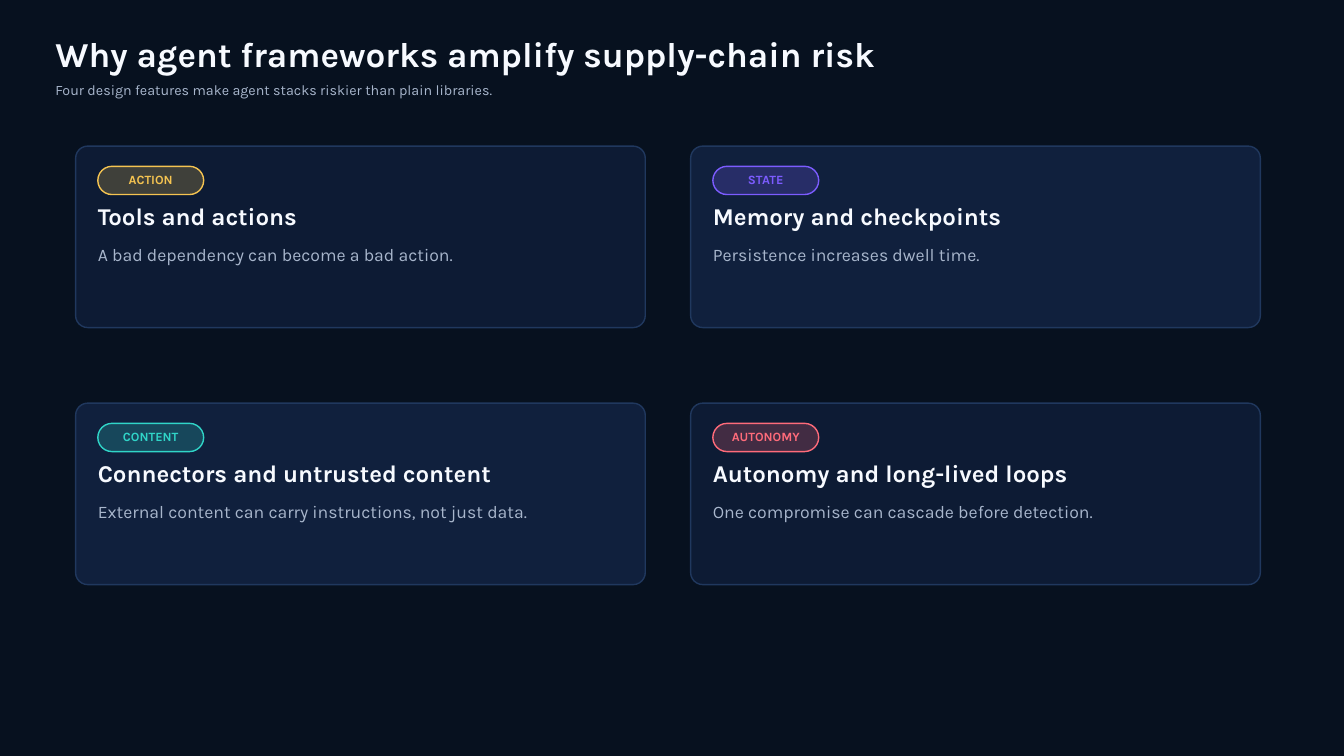
import lxml.etree
import pptx
import pptx.dml.color
import pptx.enum.shapes
import pptx.enum.text
import pptx.oxml.ns
import pptx.util

Inches = pptx.util.Inches
hex_color = pptx.dml.color.RGBColor.from_string
LEFT = pptx.enum.text.PP_ALIGN.LEFT
CENTER = pptx.enum.text.PP_ALIGN.CENTER
WHITE, MUTED = "F7FAFF", "A8B6CC"
NIGHT, NAVY, SLATE, EDGE = "07111F", "0D1B34", "10203D", "20385E"

deck = pptx.Presentation()
deck.slide_width = Inches(13.33)
deck.slide_height = Inches(7.5)
slide = deck.slides.add_slide(deck.slide_layouts[6])
slide.background.fill.solid()
slide.background.fill.fore_color.rgb = hex_color(NIGHT)


def add_text(text, left, top, width, height, size, color, bold=False, align=LEFT):
    box = slide.shapes.add_textbox(Inches(left), Inches(top), Inches(width), Inches(height))
    frame = box.text_frame
    frame.text = text
    frame.word_wrap = True
    frame.vertical_anchor = pptx.enum.text.MSO_ANCHOR.MIDDLE
    frame.margin_left = frame.margin_right = frame.margin_top = frame.margin_bottom = 0
    paragraph = frame.paragraphs[0]
    paragraph.alignment = align
    font = paragraph.runs[0].font
    font.name = "Karla"
    font.size = pptx.util.Pt(size)
    font.bold = bold
    font.color.rgb = hex_color(color)


def add_rounded(left, top, width, height, radius, fill, line):
    shape = slide.shapes.add_shape(
        pptx.enum.shapes.MSO_SHAPE.ROUNDED_RECTANGLE,
        Inches(left), Inches(top), Inches(width), Inches(height))
    shape.adjustments[0] = radius / height
    shape.shadow.inherit = False
    shape.fill.solid()
    shape.fill.fore_color.rgb = hex_color(fill)
    shape.line.color.rgb = hex_color(line)
    shape.line.width = pptx.util.Pt(1)
    return shape


add_text("Why agent frameworks amplify supply-chain risk", 0.55, 0.32, 10.9, 0.42, 25, WHITE, bold=True)
add_text("Four design features make agent stacks riskier than plain libraries.",
         0.55, 0.78, 12, 0.22, 10.2, MUTED)

features = [
    ("ACTION", "F5C451", NAVY, "Tools and actions", "A bad dependency can become a bad action."),
    ("STATE", "7C5CFF", SLATE, "Memory and checkpoints", "Persistence increases dwell time."),
    ("CONTENT", "30D5C8", SLATE, "Connectors and untrusted content",
     "External content can carry instructions, not just data."),
    ("AUTONOMY", "FF6B7A", NAVY, "Autonomy and long-lived loops",
     "One compromise can cascade before detection."),
]

for index, (tag, accent, card_fill, heading, detail) in enumerate(features):
    row, column = divmod(index, 2)
    left = 0.75 + 6.1 * column
    top = 1.45 + 2.55 * row
    inner = left + 0.22
    add_rounded(left, top, 5.65, 1.8, 0.12, card_fill, EDGE)
    pill = add_rounded(inner, top + 0.2, 1.05, 0.28, 0.14, accent, accent)
    pill_color = pill.fill._xPr.find(pptx.oxml.ns.qn("a:solidFill"))[0]
    lxml.etree.SubElement(pill_color, pptx.oxml.ns.qn("a:alpha"), val="22000")
    add_text(tag, inner + 0.06, top + 0.24, 0.93, 0.18, 9, accent, bold=True, align=CENTER)
    add_text(heading, inner, top + 0.58, 4.9, 0.22, 17.2, WHITE, bold=True)
    add_text(detail, inner, top + 0.95, 4.95, 0.25, 12.6, MUTED)

deck.save("out.pptx")
